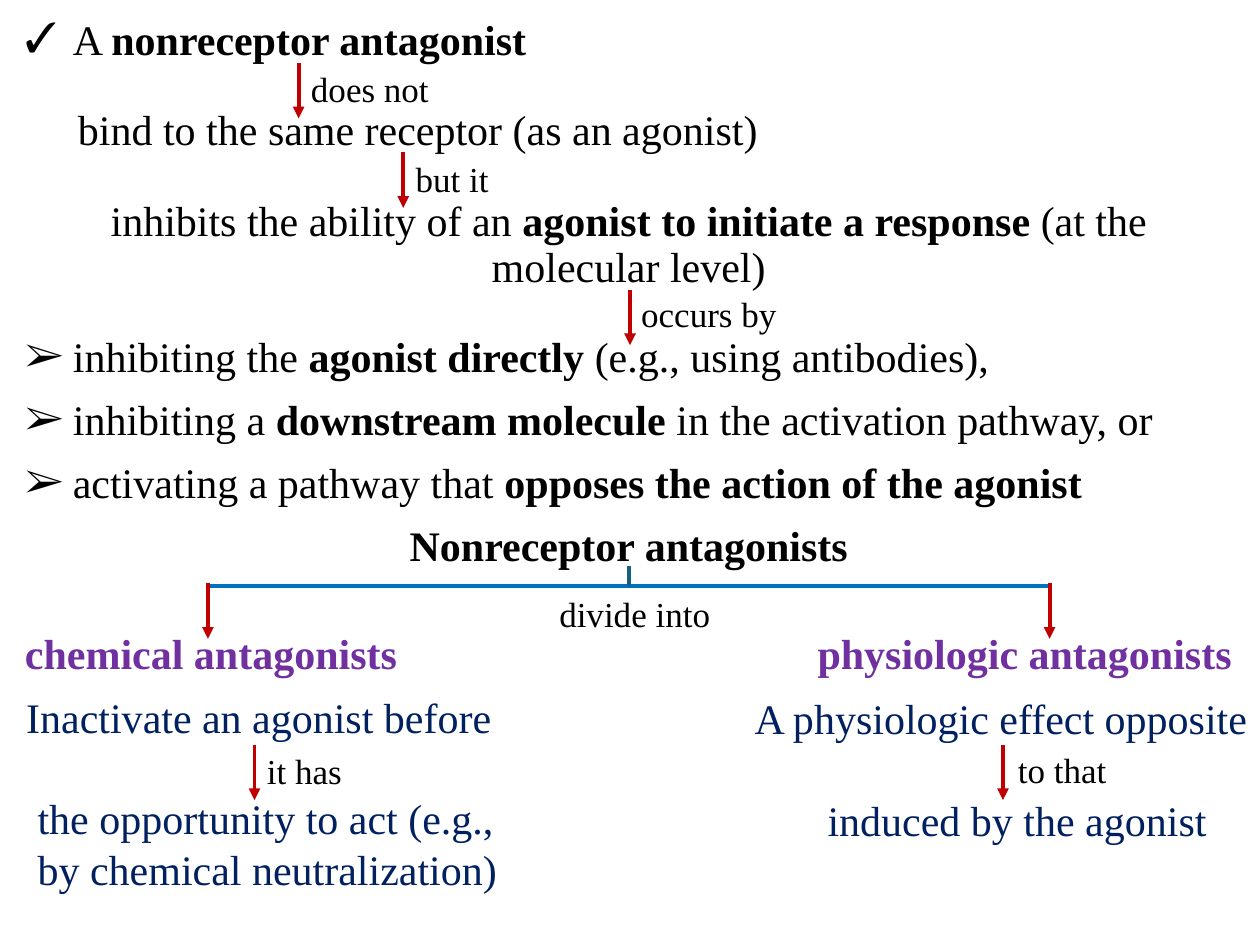
from dataclasses import dataclass

from lxml import etree
from pptx import Presentation
from pptx.dml.color import RGBColor
from pptx.enum import shapes, text
from pptx.oxml import ns
from pptx.util import Inches, Pt


@dataclass(frozen=True)
class Theme:
    font: str = "Times New Roman"
    body_size: int = 24
    label_size: int = 20
    line_width: float = 2.25
    black: str = "000000"
    navy: str = "002060"
    purple: str = "7030A0"
    red: str = "C00000"
    blue: str = "0070C0"
    teal: str = "156082"


theme = Theme()
presentation = Presentation()
presentation.slide_width, presentation.slide_height = Inches(10), Inches(7.5)
slide = presentation.slides.add_slide(presentation.slide_layouts[6])
LEFT, CENTER, JUSTIFY = text.PP_ALIGN.LEFT, text.PP_ALIGN.CENTER, text.PP_ALIGN.JUSTIFY


def add_text(box, paragraphs, size, color, line_spacing=None):
    shape = slide.shapes.add_textbox(*(Inches(value) for value in box))
    frame = shape.text_frame
    frame.word_wrap = True
    for index, (pieces, align, before, indent, bullet) in enumerate(paragraphs):
        paragraph = frame.paragraphs[0] if index == 0 else frame.add_paragraph()
        for position, piece in enumerate(pieces):
            if piece:
                run = paragraph.add_run()
                run.text = piece
                if position % 2:
                    run.font.bold = True
        paragraph.alignment = align
        paragraph.line_spacing = line_spacing
        paragraph.space_before = Pt(before)
        properties = paragraph._p.get_or_add_pPr()
        properties.set("marL", str(Inches(indent)))
        properties.set("indent", str(-Inches(indent) if bullet else 0))
        if bullet:
            etree.SubElement(properties, ns.qn("a:buFont"), typeface=theme.font)
            etree.SubElement(properties, ns.qn("a:buChar"), char=bullet)
        paragraph.font.name = theme.font
        paragraph.font.size = Pt(size)
        paragraph.font.color.rgb = RGBColor.from_string(color)


def add_line(start_x, start_y, end_x, end_y, color, arrow=False):
    line = slide.shapes.add_connector(
        shapes.MSO_CONNECTOR.STRAIGHT,
        Inches(start_x), Inches(start_y), Inches(end_x), Inches(end_y))
    line.line.color.rgb = RGBColor.from_string(color)
    line.line.width = Pt(theme.line_width)
    if arrow:
        etree.SubElement(line.line._get_or_add_ln(), ns.qn("a:tailEnd"), type="triangle")
    etree.SubElement(line._element.spPr, ns.qn("a:effectLst"))


definition = [
    (["A ", "nonreceptor antagonist"], JUSTIFY, 0, 0.38, "✓"),
    (["bind to the same receptor (as an agonist)"], JUSTIFY, 26, 0.42, None),
    (["inhibits the ability of an ", "agonist to initiate a response ",
      "(at the molecular level)"], CENTER, 26, 0, None),
    (["inhibiting the ", "agonist directly ", "(e.g., using antibodies),"],
     JUSTIFY, 26, 0.38, "➢"),
    (["inhibiting a ", "downstream molecule ", "in the activation pathway, or"],
     JUSTIFY, 10, 0.38, "➢"),
    (["activating a pathway that ", "opposes the action of the agonist"],
     JUSTIFY, 10, 0.38, "➢"),
    (["", "Nonreceptor antagonists"], CENTER, 10, 0, None),
]
add_text((0.1, 0.1, 9.78, 4.6), definition, theme.body_size, theme.black, 0.9)

for heading, x, width in [
    ("chemical antagonists", 0.1, 3.3),
    ("physiologic antagonists", 6.39, 3.55),
]:
    add_text((x, 4.93, width, 0.5), [(["", heading], LEFT, 0, 0, None)],
             theme.body_size, theme.purple)

chemical = [
    (["Inactivate an agonist before"], LEFT, 0, 0, None),
    (["the opportunity to act (e.g.,"], LEFT, 29, 0.09, None),
    (["by chemical neutralization)"], LEFT, 0, 0.09, None),
]
physiologic = [
    (["A physiologic effect opposite"], LEFT, 0, 0, None),
    (["induced by the agonist"], LEFT, 29, 0.58, None),
]
add_text((0.11, 5.44, 4.05, 1.72), chemical, theme.body_size, theme.navy)
add_text((5.89, 5.45, 4.24, 1.31), physiologic, theme.body_size, theme.navy)

add_line(1.66, 4.65, 8.33, 4.65, theme.blue)
add_line(4.99, 4.65, 4.99, 4.49, theme.teal)

ARROW_LENGTH = 0.44
for x, y in [(2.37, 0.5), (3.2, 1.21), (5, 2.3), (1.65, 4.63), (8.33, 4.63),
             (2.02, 5.91), (7.96, 5.91)]:
    add_line(x, y, x, y + ARROW_LENGTH, theme.red, arrow=True)

for label, x, y, width in [
    ("does not", 2.37, 0.49, 1.2),
    ("but it", 3.2, 1.2, 0.85),
    ("occurs by", 4.99, 2.27, 1.32),
    ("divide into", 4.34, 4.65, 1.42),
    ("it has", 2.02, 5.9, 0.82),
    ("to that", 7.98, 5.89, 0.95),
]:
    add_text((x, y, width, 0.44), [([label], LEFT, 0, 0, None)],
             theme.label_size, theme.black)

presentation.save("out.pptx")
